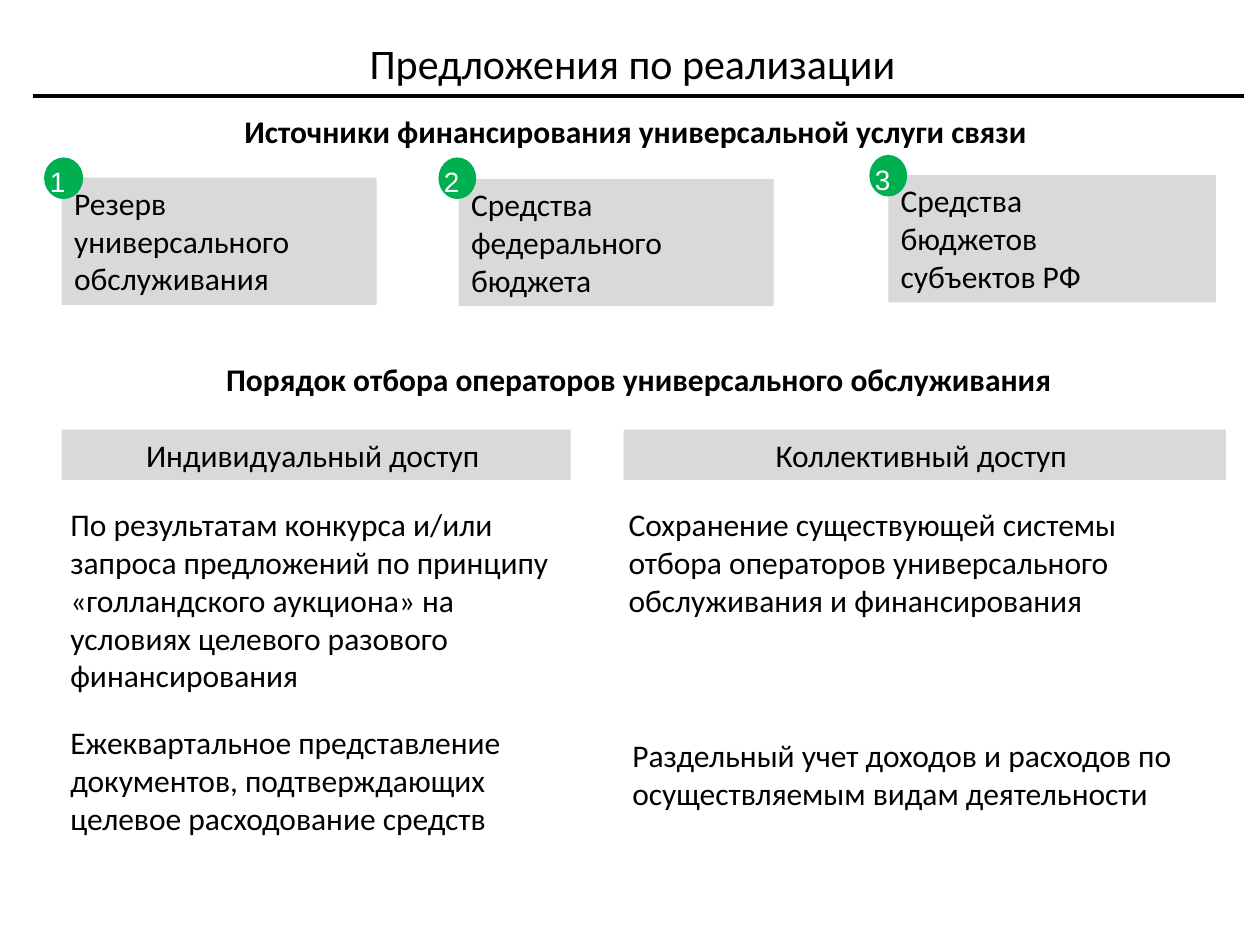
from dataclasses import dataclass

from lxml import etree
from pptx import Presentation
from pptx import util as u
from pptx.dml import color
from pptx.enum import shapes, text
from pptx.oxml import ns

COLUMNS, ROWS = 100, 75
LEFT, CENTER, JUSTIFY = (
    text.PP_ALIGN.LEFT, text.PP_ALIGN.CENTER, text.PP_ALIGN.JUSTIFY)


@dataclass(frozen=True)
class Theme:
    ink: str = "000000"
    panel: str = "D9D9D9"
    badge: str = "00B050"
    badge_ink: str = "FFFFFF"
    font: str = "Calibri"
    badge_font: str = "Arial"
    title_size: int = 24
    body_size: int = 18
    badge_size: int = 16
    badge_leading: int = 20
    rule_width: float = 2.25


@dataclass(frozen=True)
class Area:
    column: float
    row: float
    columns: float
    rows: float


@dataclass(frozen=True)
class Block:
    area: Area
    words: str
    align: text.PP_ALIGN = LEFT
    filled: bool = False
    bold: bool = False


@dataclass(frozen=True)
class Source:
    panel: Block
    badge: Area


THEME = Theme()
TITLE = Block(Area(3.9, 2.8, 92.6, 4.4), "Предложения по реализации", CENTER)
RULE_START, RULE_END, RULE_ROW = 2.6, 98.7, 7.6

HEADINGS = (
    Block(Area(4.6, 8.4, 92.3, 4),
          "Источники финансирования универсальной услуги связи ", CENTER, bold=True),
    Block(Area(4.7, 28.1, 92.6, 4),
          "Порядок отбора операторов универсального обслуживания ", CENTER, bold=True),
)
SOURCES = (
    Source(Block(Area(4.9, 14.1, 25, 10.1),
                 "Резерв универсального обслуживания ", JUSTIFY, True),
           Area(3.5, 12.5, 3.1, 3.3)),
    Source(Block(Area(36.4, 14.2, 25, 10.1),
                 "Средства федерального бюджета", LEFT, True),
           Area(34.8, 12.5, 3, 3.3)),
    Source(Block(Area(70.5, 13.9, 26, 10.1),
                 "Средства \nбюджетов \nсубъектов РФ", JUSTIFY, True),
           Area(69, 12.3, 3, 3.3)),
)
SELECTION = (
    Block(Area(4.9, 34.1, 40.4, 4), "Индивидуальный доступ ", CENTER, True),
    Block(Area(49.5, 34.1, 47.8, 4), "Коллективный доступ ", CENTER, True),
    Block(Area(4.6, 39.6, 42.2, 16.2),
          "По результатам конкурса и/или запроса предложений по принципу "
          "«голландского аукциона» на условиях целевого разового финансирования"),
    Block(Area(48.9, 39.6, 48, 10.1),
          "Сохранение существующей системы отбора операторов универсального "
          "обслуживания и финансирования"),
    Block(Area(4.6, 56.9, 42.2, 10.1),
          "Ежеквартальное представление документов, подтверждающих "
          "целевое расходование средств"),
    Block(Area(49.2, 57.9, 47.3, 7.1),
          "Раздельный учет доходов и расходов по осуществляемым видам деятельности"),
)


def across(deck, columns: float) -> int:
    return round(deck.slide_width * columns / COLUMNS)


def down(deck, rows: float) -> int:
    return round(deck.slide_height * rows / ROWS)


def place(deck, area: Area) -> tuple[int, int, int, int]:
    return (across(deck, area.column), down(deck, area.row),
            across(deck, area.columns), down(deck, area.rows))


def add_filled(deck, page, kind: shapes.MSO_SHAPE, area: Area, fill: str):
    shape = page.shapes.add_shape(kind, *place(deck, area))
    shape.shadow.inherit = False
    shape.fill.solid()
    shape.fill.fore_color.rgb = color.RGBColor.from_string(fill)
    shape.line.fill.background()
    return shape


def style(para, align: text.PP_ALIGN, font: str, size: int, ink: str,
          bold: bool = False) -> None:
    para.alignment = align
    para.font.name = font
    para.font.size = u.Pt(size)
    para.font.bold = bold
    para.font.color.rgb = color.RGBColor.from_string(ink)


def add_block(deck, page, block: Block, size: int = THEME.body_size):
    if block.filled:
        box = add_filled(deck, page, shapes.MSO_SHAPE.RECTANGLE, block.area, THEME.panel)
    else:
        box = page.shapes.add_textbox(*place(deck, block.area))
    frame = box.text_frame
    frame.word_wrap = True
    frame.auto_size = text.MSO_AUTO_SIZE.SHAPE_TO_FIT_TEXT
    frame.vertical_anchor = text.MSO_ANCHOR.TOP
    frame.text = block.words
    for para in frame.paragraphs:
        style(para, block.align, THEME.font, size, THEME.ink, block.bold)
    return box


def add_title(deck, page) -> None:
    frame = add_block(deck, page, TITLE, THEME.title_size).text_frame
    frame.auto_size = text.MSO_AUTO_SIZE.NONE
    frame.vertical_anchor = text.MSO_ANCHOR.MIDDLE


def add_rule(deck, page) -> None:
    row = down(deck, RULE_ROW)
    rule = page.shapes.add_connector(
        shapes.MSO_CONNECTOR.STRAIGHT,
        across(deck, RULE_START), row, across(deck, RULE_END), row)
    rule.line.color.rgb = color.RGBColor.from_string(THEME.ink)
    rule.line.width = u.Pt(THEME.rule_width)
    etree.SubElement(rule.element.spPr, ns.qn("a:effectLst"))


def add_badge(deck, page, area: Area, number: int) -> None:
    badge = add_filled(deck, page, shapes.MSO_SHAPE.OVAL, area, THEME.badge)
    frame = badge.text_frame
    frame.margin_left = frame.margin_right = frame.margin_top = frame.margin_bottom = 0
    frame.vertical_anchor = text.MSO_ANCHOR.TOP
    frame.text = str(number)
    para = frame.paragraphs[0]
    para.line_spacing = u.Pt(THEME.badge_leading)
    style(para, LEFT, THEME.badge_font, THEME.badge_size, THEME.badge_ink)


def main() -> None:
    deck = Presentation()
    deck.slide_width, deck.slide_height = u.Inches(10), u.Inches(7.5)
    page = deck.slides.add_slide(deck.slide_layouts[6])
    add_title(deck, page)
    add_rule(deck, page)
    for block in HEADINGS + SELECTION:
        add_block(deck, page, block)
    for number, source in enumerate(SOURCES, start=1):
        add_block(deck, page, source.panel)
        add_badge(deck, page, source.badge, number)
    deck.save("out.pptx")


if __name__ == "__main__":
    main()
